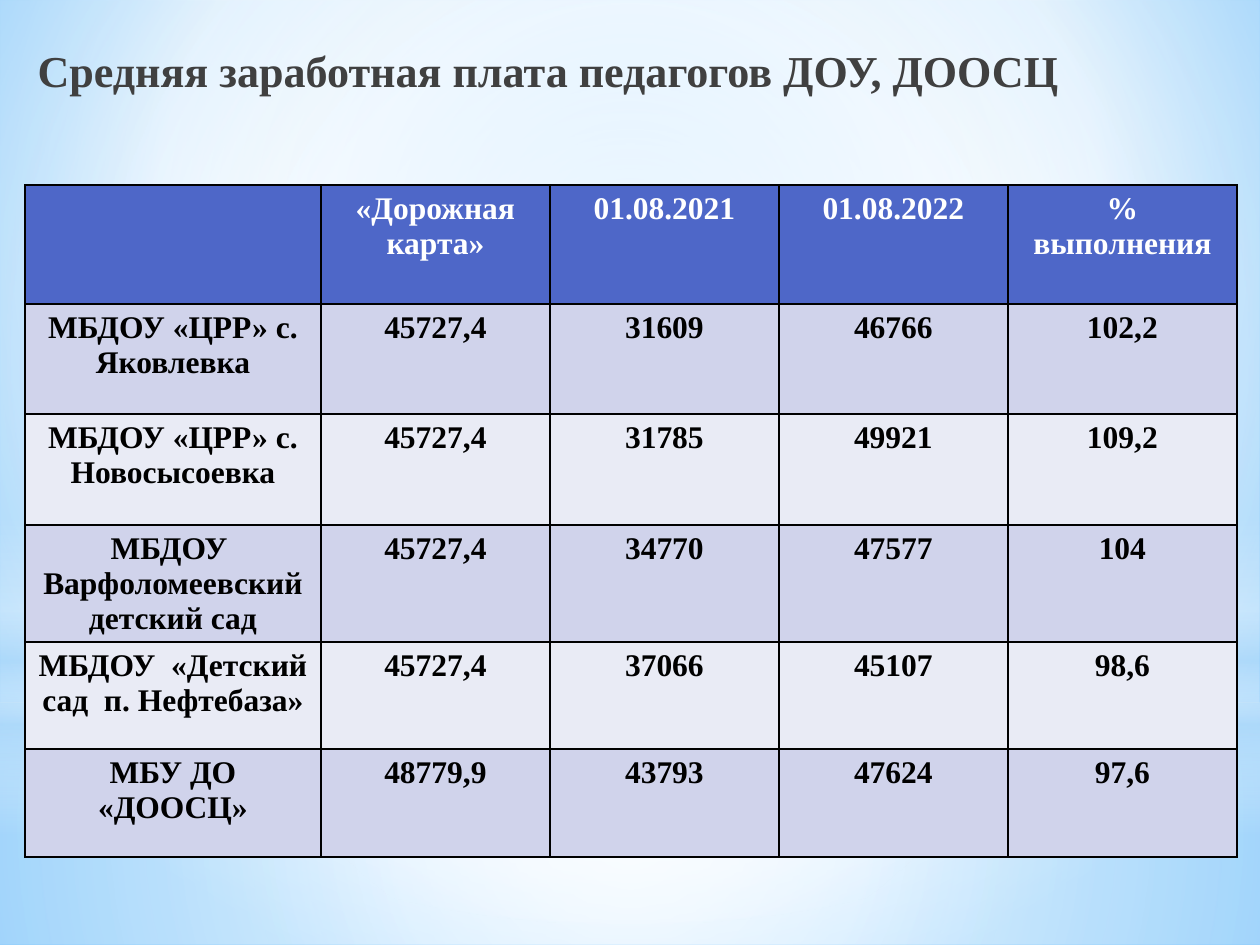
from lxml import etree
from pptx import Presentation
from pptx.dml.color import RGBColor
from pptx.enum.shapes import MSO_SHAPE
from pptx.enum.text import MSO_ANCHOR, PP_ALIGN
from pptx.oxml import parse_xml
from pptx.oxml.ns import nsdecls, qn
from pptx.util import Emu, Pt

RECT, OVAL = MSO_SHAPE.RECTANGLE, MSO_SHAPE.OVAL
TOP = MSO_ANCHOR.TOP
LEFT, CENTER = PP_ALIGN.LEFT, PP_ALIGN.CENTER

SCALE = 914400 / 126
W, H = 1260, 945
FONT = "Times New Roman"

WHITE = RGBColor(0xFF, 0xFF, 0xFF)
BLACK = RGBColor(0x00, 0x00, 0x00)
GRAY = RGBColor(0x40, 0x40, 0x40)
BLUE = RGBColor(0x4E, 0x67, 0xC8)
BAND_DARK = RGBColor(0xD0, 0xD3, 0xEB)
BAND_LIGHT = RGBColor(0xE9, 0xEB, 0xF5)
SKY = RGBColor(0x9E, 0xD5, 0xFF)
SKY_DEEP = RGBColor(0x5B, 0xB9, 0xFF)
HAZE = RGBColor(0xB4, 0xDC, 0xFA)

CENTRE = (50, 50, 50, 50)
GLOWS = [
    (RECT, (0, 703, W, 242),
     [(0, WHITE, 91), (37, WHITE, 76), (100, HAZE, 79)], CENTRE),
    (RECT, (0, 0, W, 703),
     [(0, WHITE, 89), (48, WHITE, 62), (100, HAZE, 79)], CENTRE),
    (RECT, (0, 519, W, 315),
     [(0, WHITE, 0), (29, WHITE, 30), (45, HAZE, 40), (55, WHITE, 26),
      (65, HAZE, 60), (100, WHITE, 0)], None),
    (OVAL, (0, 220, W, 703), [(0, WHITE, 100), (56, WHITE, 0)], CENTRE),
]

COL_WIDTHS = [296] + [229] * 4
ROW_HEIGHTS = [119, 110, 111, 117, 107, 108]
ROWS = [
    ["", "«Дорожная карта»", "01.08.2021", "01.08.2022", "% выполнения"],
    ["МБДОУ «ЦРР» с. Яковлевка", "45727,4", "31609", "46766", "102,2"],
    ["МБДОУ «ЦРР» с. Новосысоевка", "45727,4", "31785", "49921", "109,2"],
    ["МБДОУ  Варфоломеевский детский сад", "45727,4", "34770", "47577", "104"],
    ["МБДОУ  «Детский сад  п. Нефтебаза»", "45727,4", "37066", "45107", "98,6"],
    ["МБУ ДО «ДООСЦ»", "48779,9", "43793", "47624", "97,6"],
]


def px(n):
    return Emu(round(n * SCALE))


def write(tf, text, size=18, color=BLACK, align=CENTER):
    tf.word_wrap = True
    tf.vertical_anchor = TOP
    p = tf.paragraphs[0]
    p.alignment = align
    p.font.size = Pt(size)
    if text:
        r = p.add_run()
        r.text = text
        r.font.name = FONT
        r.font.size = Pt(size)
        r.font.bold = True
        r.font.color.rgb = color


def set_gradient(element, stops, focus):
    stop_xml = "".join(
        f'<a:gs pos="{pos * 1000}"><a:srgbClr val="{color}">'
        f'<a:alpha val="{alpha * 1000}"/></a:srgbClr></a:gs>'
        for pos, color, alpha in stops)
    if focus:
        l, t, r, b = (n * 1000 for n in focus)
        shade = (f'<a:path path="circle"><a:fillToRect l="{l}" t="{t}" '
                 f'r="{r}" b="{b}"/></a:path>')
    else:
        shade = '<a:lin ang="5400000" scaled="0"/>'
    grad = parse_xml(f'<a:gradFill {nsdecls("a")} rotWithShape="1">'
                     f'<a:gsLst>{stop_xml}</a:gsLst>{shade}</a:gradFill>')
    old = element.find(".//" + qn("a:solidFill"))
    old.getparent().replace(old, grad)


def add_backdrop(slide):
    slide.background.fill.solid()
    set_gradient(slide._element,
                 [(0, SKY, 100), (60, WHITE, 100), (100, SKY_DEEP, 100)],
                 (20, 10, 20, 60))
    for kind, box, stops, focus in GLOWS:
        sp = slide.shapes.add_shape(kind, *map(px, box))
        sp.shadow.inherit = False
        sp.line.fill.background()
        sp.fill.solid()
        set_gradient(sp._element, stops, focus)


def add_title(slide, x, y, w, h):
    sp = slide.shapes.title
    sp.left, sp.top, sp.width, sp.height = map(px, (x, y, w, h))
    write(sp.text_frame, "Средняя заработная плата педагогов ДОУ, ДООСЦ",
          size=25.2, color=GRAY, align=LEFT)
    slide.shapes._spTree.append(sp._element)


def set_borders(cell):
    tc_pr = cell._tc.get_or_add_tcPr()
    for i, side in enumerate(("lnL", "lnR", "lnT", "lnB")):
        ln = etree.Element(qn(f"a:{side}"), w=str(Pt(1)))
        fill = etree.SubElement(ln, qn("a:solidFill"))
        etree.SubElement(fill, qn("a:srgbClr"), val=str(BLACK))
        tc_pr.insert(i, ln)


def add_salary_table(slide, x, y):
    frame = slide.shapes.add_table(
        len(ROWS), len(COL_WIDTHS), px(x), px(y),
        px(sum(COL_WIDTHS)), px(sum(ROW_HEIGHTS)))
    table = frame.table
    for col, width in zip(table.columns, COL_WIDTHS):
        col.width = px(width)
    for i, (row, height) in enumerate(zip(table.rows, ROW_HEIGHTS)):
        row.height = px(height)
        band = BAND_DARK if i % 2 else BAND_LIGHT
        for cell, text in zip(row.cells, ROWS[i]):
            cell.fill.solid()
            cell.fill.fore_color.rgb = band if i else BLUE
            set_borders(cell)
            write(cell.text_frame, text, color=BLACK if i else WHITE)


def main():
    prs = Presentation()
    prs.slide_width, prs.slide_height = px(W), px(H)
    slide = prs.slides.add_slide(prs.slide_layouts[5])
    add_backdrop(slide)
    add_title(slide, 25, 37, 1081, 100)
    add_salary_table(slide, 25, 185)
    prs.save("out.pptx")


if __name__ == "__main__":
    main()
